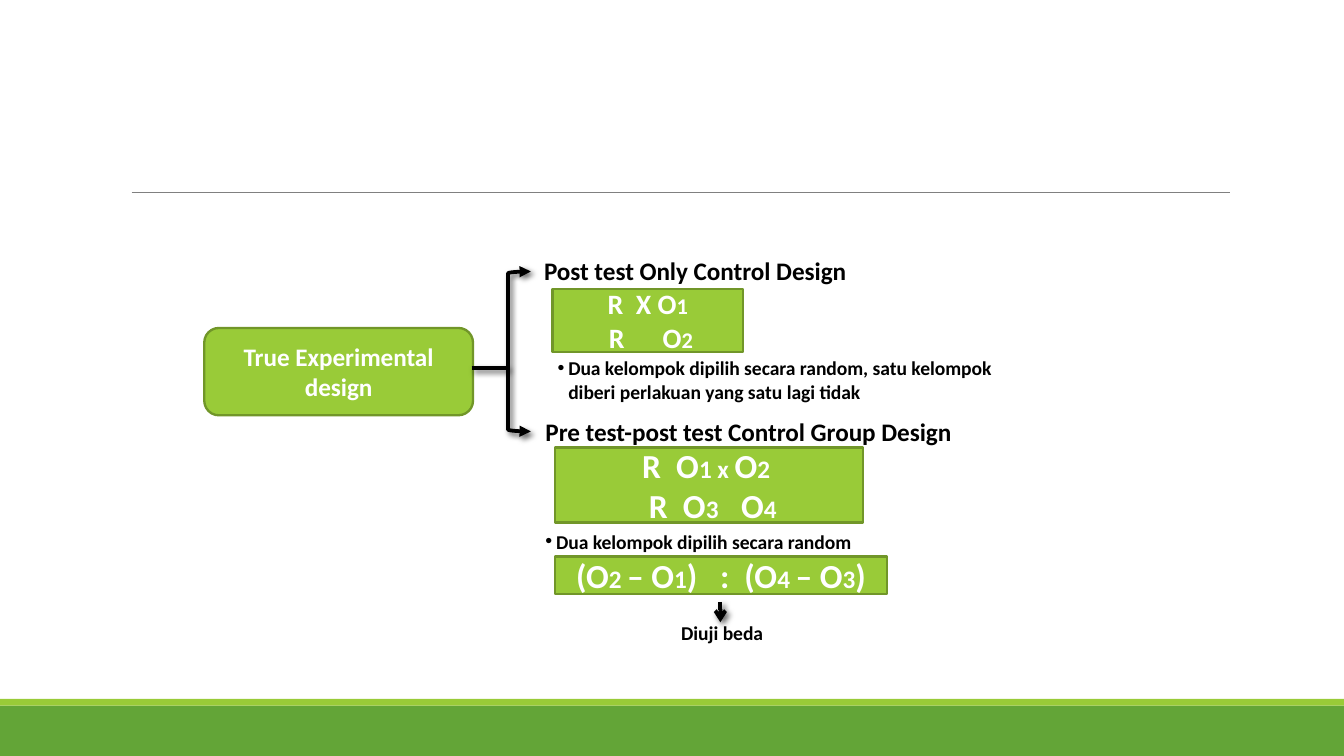
from lxml import etree
from pptx import Presentation
from pptx.dml.color import RGBColor
from pptx.enum.shapes import MSO_CONNECTOR as Link, MSO_SHAPE as Kind
from pptx.enum.text import MSO_ANCHOR as Anchor, PP_ALIGN as Align
from pptx.oxml import parse_xml
from pptx.oxml.ns import nsdecls, qn
from pptx.util import Inches, Pt

HUES = {"band": "63A537", "lime": "99CB38", "edge": "719629",
        "rule": "808080", "ink": "000000", "white": "FFFFFF"}
FONT = "Calibri"
WIDE = 10
HIGH = WIDE * 9 / 16

BANDS = [((0, 5.25, WIDE, HIGH - 5.25), "band"), ((0, 5.2, WIDE, 0.05), "lime")]

BOXES = [
    (Kind.ROUNDED_RECTANGLE, (1.52, 2.44, 2, 0.65),
     [[("True Experimental", 13.5)], [("design", 13.5)]]),
    (Kind.RECTANGLE, (4.11, 2.15, 1.42, 0.47),
     [[("R  X O", 15), ("1", 12)], [(" R      O", 15), ("2", 12)]]),
    (Kind.RECTANGLE, (4.13, 3.33, 2.29, 0.56),
     [[("R  O", 18), ("1 x ", 13.5), ("O", 18), ("2 ", 13.5)],
      [(" R  O", 18), ("3    ", 13.5), ("O", 18), ("4", 13.5)]]),
    (Kind.RECTANGLE, (4.13, 4.14, 2.47, 0.28),
     [[("(O", 18), ("2 ", 13.5), ("– O", 18), ("1", 13.5),
       (")   :  (O", 18), ("4 ", 13.5), ("– O", 18), ("3", 13.5), (")", 18)]]),
]

LABELS = [
    ((3.95, 1.85, 2.76, 0.33), "Post test Only Control Design", 13.5, False),
    ((4.05, 2.6, 3.72, 0.45), "Dua kelompok dipilih secara random, satu kelompok "
     "diberi perlakuan yang satu lagi tidak", 10.5, True),
    ((3.96, 3.05, 3.81, 0.33), "Pre test-post test Control Group Design", 13.5, False),
    ((3.96, 3.89, 3.72, 0.28), "Dua kelompok dipilih secara random", 10.5, True),
    ((4.97, 4.57, 0.84, 0.28), "Diuji beda", 10.5, False),
]

BRACKET = (3.78, 2.02, 0.17, 1.19)
STEM = (3.51, 2.74, 3.78, 2.74)
DROP = (5.36, 4.48, 5.36, 4.63)
RULE = (0.98, 1.43, 9.15, 1.43)


def hue(name):
    return RGBColor.from_string(HUES[name])


def inches(spot):
    return [Inches(n) for n in spot]


def stroke(item, name, width):
    item.line.color.rgb = hue(name)
    item.line.width = Pt(width)


def block(kind, spot, fill):
    item = slide.shapes.add_shape(kind, *inches(spot))
    item.shadow.inherit = False
    if fill:
        item.fill.solid()
        item.fill.fore_color.rgb = hue(fill)
    else:
        item.fill.background()
    item.line.fill.background()
    return item


def wire(spot, name, width):
    item = slide.shapes.add_connector(Link.STRAIGHT, *inches(spot))
    stroke(item, name, width)
    etree.SubElement(item._element.spPr, qn("a:effectLst"))
    return item


def shade(item):
    glow = item._element.spPr.find(qn("a:effectLst"))
    glow.append(parse_xml(
        f'<a:outerShdw {nsdecls("a")} blurRad="{Pt(3)}" dist="{Pt(2)}" '
        f'dir="{45 * 60000}" rotWithShape="0"><a:srgbClr val="{HUES["ink"]}">'
        '<a:alpha val="60000"/></a:srgbClr></a:outerShdw>'))


def tip(item, **ends):
    line = item.line._get_or_add_ln()
    for end, kind in ends.items():
        etree.SubElement(line, qn(f"a:{end}End"), type=kind)


def style(run, size, name):
    run.font.name = FONT
    run.font.size = Pt(size)
    run.font.bold = True
    run.font.color.rgb = hue(name)


def bullet(para):
    props = para._p.get_or_add_pPr()
    props.set("marL", str(Inches(0.08)))
    props.set("indent", str(Inches(-0.08)))
    etree.SubElement(props, qn("a:buFont"), typeface="Arial")
    etree.SubElement(props, qn("a:buChar"), char="•")


deck = Presentation()
deck.slide_width, deck.slide_height = inches((WIDE, HIGH))
slide = deck.slides.add_slide(deck.slide_layouts[6])

for spot, fill in BANDS:
    block(Kind.RECTANGLE, spot, fill)
wire(RULE, "rule", 0.5)

for kind, spot, rows in BOXES:
    box = block(kind, spot, "lime")
    stroke(box, "edge", 1.25)
    frame = box.text_frame
    frame.word_wrap = True
    frame.vertical_anchor = Anchor.MIDDLE
    for i, row in enumerate(rows):
        para = frame.add_paragraph() if i else frame.paragraphs[0]
        para.alignment = Align.CENTER
        for text, size in row:
            run = para.add_run()
            run.text = text
            style(run, size, "white")

fork = block(Kind.LEFT_BRACKET, BRACKET, None)
stroke(fork, "ink", 2)
tip(fork, head="triangle", tail="triangle")
stem = wire(STEM, "ink", 2)
drop = wire(DROP, "ink", 2)
tip(drop, tail="arrow")
for item in (fork, stem, drop):
    shade(item)

for spot, text, size, dot in LABELS:
    frame = slide.shapes.add_textbox(*inches(spot)).text_frame
    frame.word_wrap = True
    frame.text = text
    para = frame.paragraphs[0]
    style(para.runs[0], size, "ink")
    if dot:
        bullet(para)

deck.save("out.pptx")
